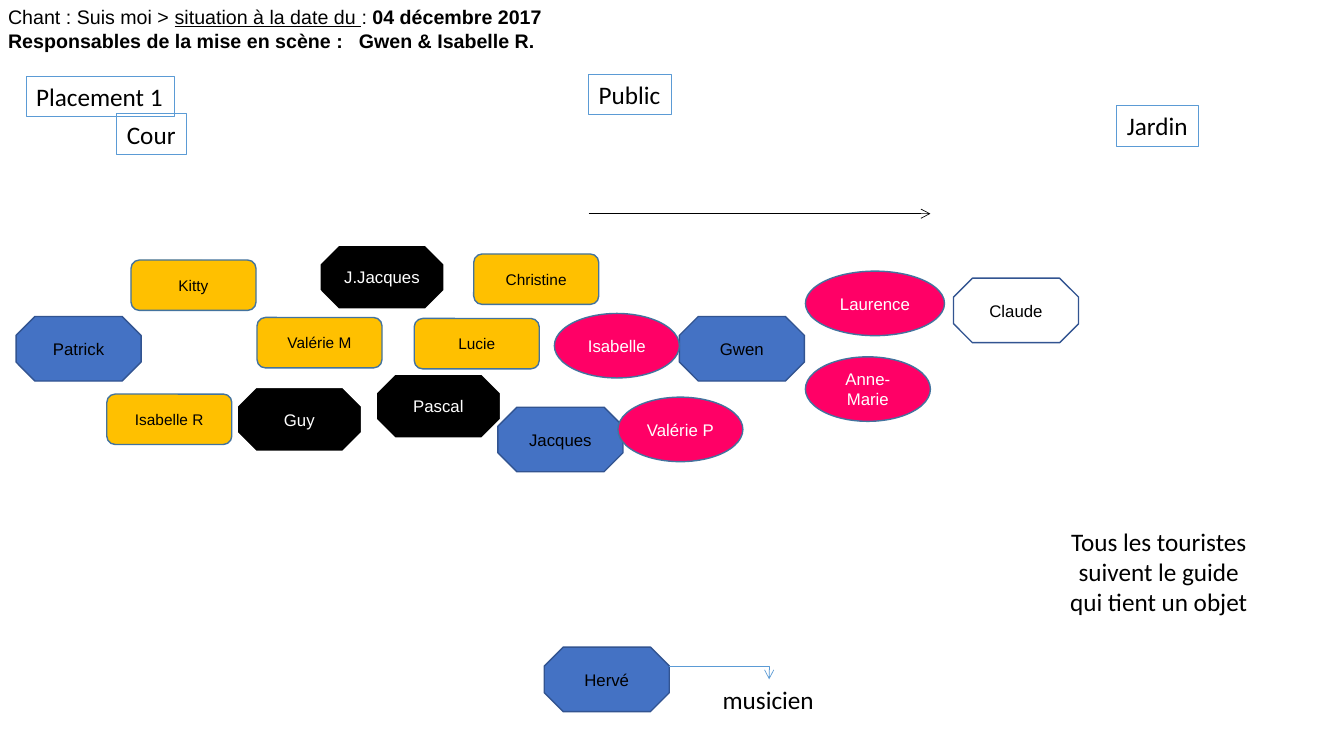
import pptx
import pptx.util
import pptx.dml.color
import pptx.enum.shapes
import pptx.enum.text
import pptx.oxml.ns
import lxml.etree

CELL = pptx.util.Inches(0.1)
COLS, ROWS = 133.33, 75
SHAPE = pptx.enum.shapes.MSO_SHAPE
LINK = pptx.enum.shapes.MSO_CONNECTOR
ALIGN = pptx.enum.text.PP_ALIGN
ANCHOR = pptx.enum.text.MSO_ANCHOR
FIT = pptx.enum.text.MSO_AUTO_SIZE

HUES = {
    "black": "000000", "white": "FFFFFF", "blue": "4472C4", "navy": "325491",
    "gold": "FFC000", "pink": "FF0066", "steel": "43739E", "sky": "5B9BD5",
}

ROLES = {
    "lead": (SHAPE.OCTAGON, 6.4, "blue", "navy", 1, "black", 12),
    "bass": (SHAPE.OCTAGON, 6.4, "black", "white", 1.5, "white", 12),
    "alto": (SHAPE.ROUNDED_RECTANGLE, 5, "gold", "steel", 1, "black", 11),
    "high": (SHAPE.OVAL, 6.4, "pink", "steel", 1, "white", 12),
    "guide": (SHAPE.OCTAGON, 6.4, "white", "navy", 1, "black", 12),
}
WIDE = 12.4

CAST = {
    "lead": [("Jacques", 49.4, 16.4), ("Patrick", 1.6, 7.4), ("Gwen", 67.4, 7.4)],
    "bass": [("Guy", 23.5, 14.4), ("Pascal", 37.3, 13.1), ("J.Jacques", 31.7, 0.3)],
    "alto": [("Christine", 47, 1.2), ("Kitty", 13, 1.8), ("Valérie M", 25.5, 7.5),
             ("Isabelle R", 10.6, 15.1), ("Lucie", 41.1, 7.6)],
    "high": [("Isabelle", 55, 7.1), ("Laurence", 79.9, 2.9, 13.8),
             ("Valérie P", 61.3, 15.4), ("Anne-Marie", 79.9, 11.4)],
    "guide": [("Claude", 94.6, 3.6)],
}

LABELS = [("Placement 1", 2.6, 0.2, 14.7), ("Public", 58.4, 0, 8.2),
          ("Jardin", 110.8, 3.1, 8.1), ("Cour", 11.6, 3.9, 6.9)]


def hue(name):
    return pptx.dml.color.RGBColor.from_string(HUES[name])


def place(box, x, y, *size):
    return [round(n * CELL) for n in (box[0] + x, box[1] + y, *size)]


def style(para, size, face, tint="black", align=ALIGN.LEFT):
    para.alignment = align
    para.font.size = pptx.util.Pt(size)
    para.font.name = face
    para.font.color.rgb = hue(tint)


def edge(line, tint, width):
    line.color.rgb = hue(tint)
    line.width = pptx.util.Pt(width)


def note(slide, area, text, wrap=False, align=ALIGN.LEFT):
    box = slide.shapes.add_textbox(*area)
    frame = box.text_frame
    frame.word_wrap = wrap
    frame.auto_size = FIT.SHAPE_TO_FIT_TEXT
    frame.text = text
    style(frame.paragraphs[0], 18, "Calibri", align=align)
    return box


def singer(slide, box, role, name, x, y, wide=WIDE):
    kind, high, fill, rim, width, ink, size = ROLES[role]
    shape = slide.shapes.add_shape(kind, *place(box, x, y, wide, high))
    shape.shadow.inherit = False
    shape.fill.solid()
    shape.fill.fore_color.rgb = hue(fill)
    edge(shape.line, rim, width)
    frame = shape.text_frame
    frame.word_wrap = True
    frame.vertical_anchor = ANCHOR.MIDDLE
    frame.text = name
    style(frame.paragraphs[0], size, "Arial", ink, ALIGN.CENTER)


def arrow(slide, kind, start, end, tint):
    link = slide.shapes.add_connector(kind, *start, *end)
    edge(link.line, tint, 0.5)
    tag = pptx.oxml.ns.qn
    lxml.etree.SubElement(link.line._get_or_add_ln(), tag("a:tailEnd"), type="arrow")
    props = link._element.spPr
    lxml.etree.SubElement(props, tag("a:effectLst"))
    if kind == LINK.ELBOW:
        props.find(tag("a:prstGeom")).set("prst", "bentConnector2")


def header(slide, box):
    title = slide.shapes.title
    title.left, title.top, title.width, title.height = place(box, 0, 0, *box[2:])
    frame = title.text_frame
    frame.word_wrap = True
    frame.auto_size = FIT.SHAPE_TO_FIT_TEXT
    frame.vertical_anchor = ANCHOR.TOP
    song, staff = frame.paragraphs[0], frame.add_paragraph()
    tag = pptx.oxml.ns.qn
    tabs = lxml.etree.SubElement(staff._p.get_or_add_pPr(), tag("a:tabLst"))
    lxml.etree.SubElement(tabs, tag("a:tab"), pos=str(round(34.8 * CELL)), algn="l")
    for para in (song, staff):
        style(para, 14, "Arial")
    for text, under, bold in [("Chant : Suis moi > ", False, False),
                              ("situation à la date du ", True, False),
                              (": ", False, False),
                              ("04 décembre 2017", False, True)]:
        run = song.add_run()
        run.text = text
        run.font.underline = under
        run.font.bold = bold
    staff.add_run().text = "Responsables de la mise en scène :\tGwen & Isabelle R."
    staff.font.bold = True


def labels(slide, box):
    for text, x, y, wide in LABELS:
        label = note(slide, place(box, x, y, wide, 4), text)
        edge(label.line, "sky", 0.75)


def stage(slide, box):
    for role, group in CAST.items():
        for member in group:
            singer(slide, box, role, *member)
    arrow(slide, LINK.STRAIGHT, place(box, 58.4, -2.8), place(box, 92.3, -2.8), "black")


def player(slide, box):
    singer(slide, box, "lead", "Hervé", 0, 0)
    note(slide, place(box, 16.7, 3.2, 11.2, 4), "musicien")
    arrow(slide, LINK.ELBOW, place(box, WIDE, 1.9), place(box, 22.3, 3.2), "sky")


def remark(slide, box):
    note(slide, place(box, 0, 0, *box[2:]),
         "Tous les touristes suivent le guide qui tient un objet", True, ALIGN.CENTER)


def main():
    deck = pptx.Presentation()
    deck.slide_width = round(COLS * CELL)
    deck.slide_height = ROWS * CELL
    slide = deck.slides.add_slide(deck.slide_layouts[5])
    header(slide, (-0.2, 0, 55.1, 5.7))
    labels(slide, (0, 7.4, COLS, 8))
    stage(slide, (0, 24, COLS, 23))
    player(slide, (54, 64.2, 28, 7.2))
    remark(slide, (104.7, 51.7, 20.5, 10.1))
    deck.save("out.pptx")


if __name__ == "__main__":
    main()
